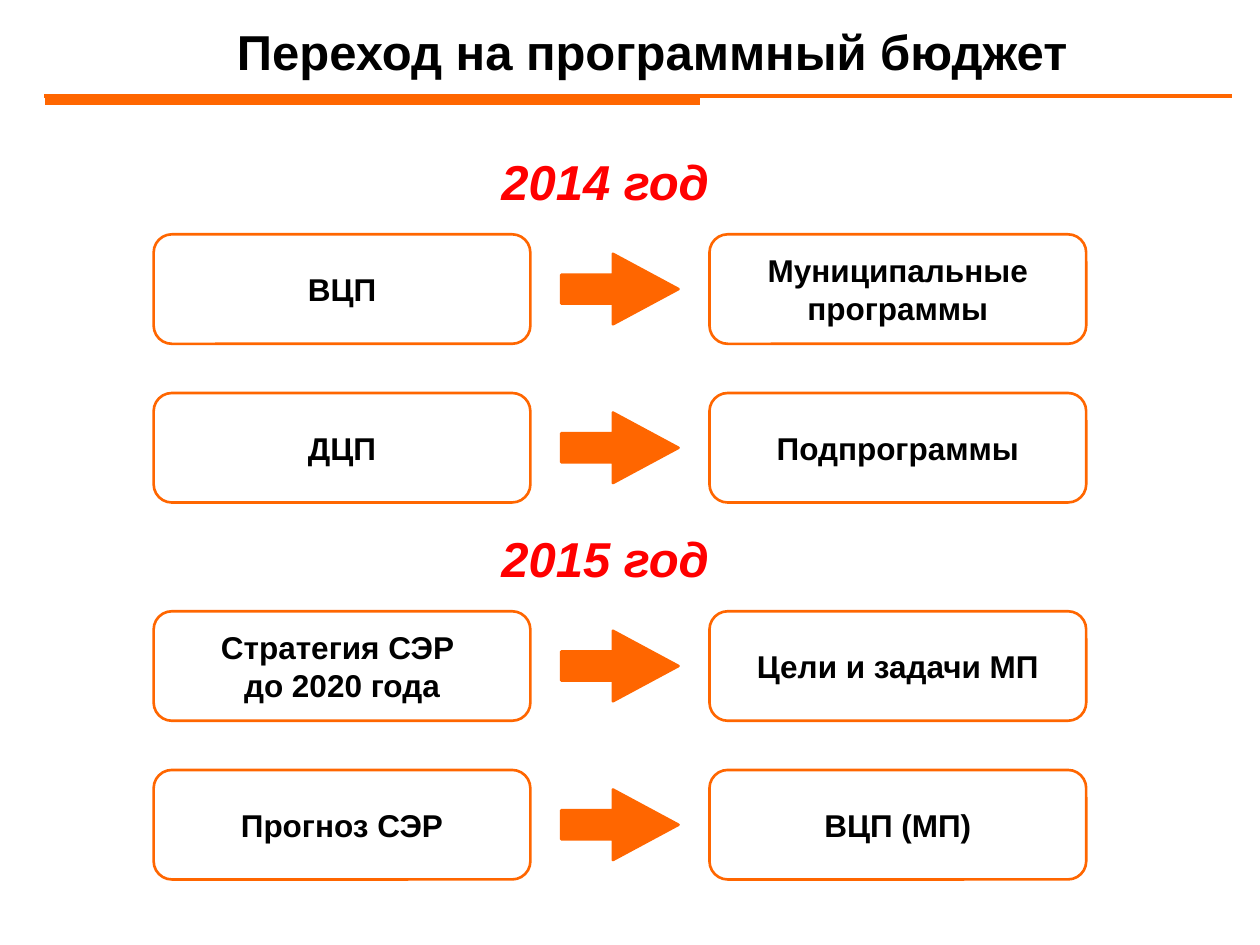
from dataclasses import dataclass

from lxml import etree
from pptx import Presentation
from pptx.dml.color import RGBColor
from pptx.enum.shapes import MSO_CONNECTOR, MSO_SHAPE
from pptx.enum.text import MSO_ANCHOR, PP_ALIGN
from pptx.oxml.ns import qn
from pptx.util import Pt

ROUNDED = MSO_SHAPE.ROUNDED_RECTANGLE
ARROW = MSO_SHAPE.RIGHT_ARROW
STRAIGHT = MSO_CONNECTOR.STRAIGHT
MIDDLE = MSO_ANCHOR.MIDDLE
CENTER = PP_ALIGN.CENTER
TITLE_ONLY = 5


@dataclass(frozen=True)
class Theme:
    font: str = "Arial"
    ink: RGBColor = RGBColor(0x00, 0x00, 0x00)
    accent: RGBColor = RGBColor(0xFF, 0x66, 0x00)
    year: RGBColor = RGBColor(0xFF, 0x00, 0x00)
    heading_size: int = 28
    box_size: int = 18
    outline: float = 1.5


THEME = Theme()

BOX_W, BOX_H = 215.3, 62.6
ROW_PITCH = 90.7
ARROW_W, ARROW_H = 67, 40.3
YEAR_W, YEAR_H = 153.4, 41
YEAR_TO_ROWS = 51.1

YEARS = [
    ("2014 год", [("ВЦП", "Муниципальные программы"),
                  ("ДЦП", "Подпрограммы")]),
    ("2015 год", [("Стратегия СЭР \vдо 2020 года", "Цели и задачи МП"),
                  ("Прогноз СЭР", "ВЦП (МП)")]),
]


def write(tf, text, size, color, italic=False):
    tf.word_wrap = True
    tf.text = text
    p = tf.paragraphs[0]
    p.alignment = CENTER
    p.font.name = THEME.font
    p.font.size = Pt(size)
    p.font.bold = True
    p.font.italic = italic
    p.font.color.rgb = color


def add_rule(s, x, y, w, weight):
    line = s.shapes.add_connector(STRAIGHT, Pt(x), Pt(y), Pt(x + w), Pt(y))
    line.line.color.rgb = THEME.accent
    line.line.width = Pt(weight)
    etree.SubElement(line._element.spPr, qn("a:effectLst"))


def add_header(s, x, y, w, h):
    """Title with a thick and a thin rule below it."""
    title = s.shapes.title
    title.left, title.top, title.width, title.height = Pt(x), Pt(y), Pt(w), Pt(h)
    title.text_frame.vertical_anchor = MIDDLE
    write(title.text_frame, "Переход на программный бюджет",
          THEME.heading_size, THEME.ink)
    add_rule(s, x + 0.5, y + 47.5, 374.5, 6)
    add_rule(s, x, y + 45.2, 678.5, 2.25)


def add_outlined(s, kind, x, y, w, h):
    sp = s.shapes.add_shape(kind, Pt(x), Pt(y), Pt(w), Pt(h))
    sp.shadow.inherit = False
    sp.line.color.rgb = THEME.accent
    sp.line.width = Pt(THEME.outline)
    return sp


def add_box(s, text, x, y):
    sp = add_outlined(s, ROUNDED, x, y, BOX_W, BOX_H)
    sp.fill.background()
    tf = sp.text_frame
    tf.margin_left = tf.margin_top = tf.margin_right = tf.margin_bottom = 0
    tf.vertical_anchor = MIDDLE
    write(tf, text, THEME.box_size, THEME.ink)


def add_row(s, before, after, x, y, w):
    """Two boxes at the ends of the row, with an arrow centred between them."""
    add_box(s, before, x, y)
    add_box(s, after, x + w - BOX_W, y)
    arrow = add_outlined(s, ARROW, x + (w - ARROW_W) / 2,
                         y + (BOX_H - ARROW_H) / 2, ARROW_W, ARROW_H)
    arrow.fill.solid()
    arrow.fill.fore_color.rgb = THEME.accent
    arrow.adjustments[0] = 0.41
    arrow.adjustments[1] = 0.93


def add_year(s, year, rows, x, y, w):
    """Year heading followed by its rows."""
    tb = s.shapes.add_textbox(Pt(x + (w - YEAR_W) / 2 - 8.4), Pt(y),
                              Pt(YEAR_W), Pt(YEAR_H))
    write(tb.text_frame, year, THEME.heading_size, THEME.year, italic=True)
    for i, (before, after) in enumerate(rows):
        add_row(s, before, after, x, y + YEAR_TO_ROWS + i * ROW_PITCH, w)


def main():
    prs = Presentation()
    prs.slide_width, prs.slide_height = Pt(720), Pt(540)
    s = prs.slides.add_slide(prs.slide_layouts[TITLE_ONLY])

    add_header(s, 25.3, 9.4, 694.7, 39.6)
    for i, (year, rows) in enumerate(YEARS):
        add_year(s, year, rows, 87.8, 82.8 + i * 215.4, 532.9)

    prs.save("out.pptx")


if __name__ == "__main__":
    main()
